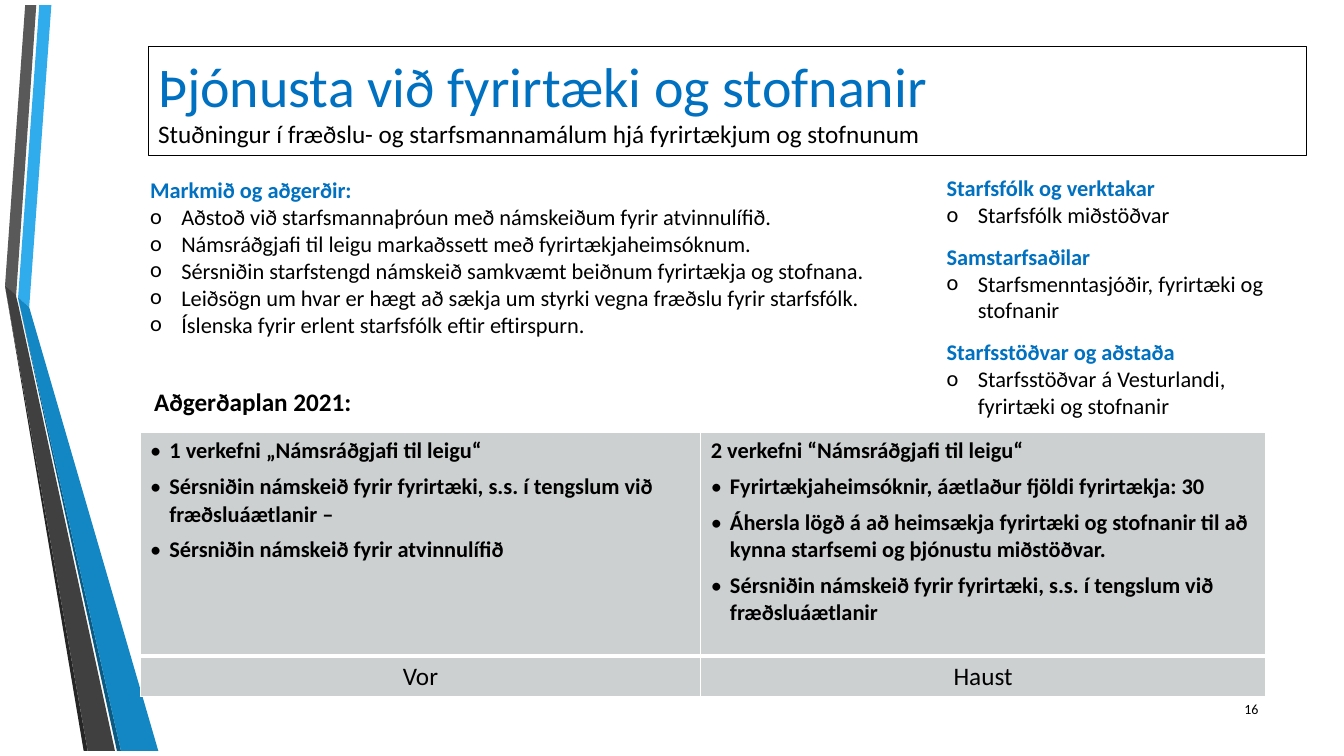
import pptx
import pptx.util
import pptx.dml.color
import pptx.enum.shapes
import pptx.enum.text
import pptx.oxml.ns
from lxml import etree

Inches, Pt = pptx.util.Inches, pptx.util.Pt
Align = pptx.enum.text.PP_ALIGN
FONT = "Calibri"
HUES = {
    "ink": "000000", "head": "0070C0", "cell": "CDD0D1", "edge": "FFFFFF",
    "sky": "30ACEC", "gray": "595959", "coal": "262626",
    "navy": "0C5A82", "blue": "1287C3", "dark": "404040",
}

# Ribbon outlines, in hundredths of an inch
RIBBONS = [
    ("sky", [(18, 295), (29, 305), (51, 5), (39, 5)]),
    ("gray", [(16, 293), (36, 5), (25, 5), (5, 283), (15, 293)]),
    ("coal", [(5, 284), (83, 745), (87, 745)]),
    ("navy", [(120, 745), (18, 296), (116, 745)]),
    ("blue", [(18, 295), (18, 296), (120, 745), (157, 745), (29, 305)]),
    ("dark", [(114, 745), (18, 302), (16, 294), (16, 293), (5, 283),
              (5, 284), (87, 745)]),
]

TITLE = "Þjónusta við fyrirtæki og stofnanir"
MOTTO = "Stuðningur í fræðslu- og starfsmannamálum hjá fyrirtækjum og stofnunum"
PLAN = "Aðgerðaplan 2021:"
PAGE = "16"

LEFT, RIGHT, SIDE = 1.39, 9.29, 3.68
# Box, item alignment, heading, items
LISTS = [
    ((LEFT, 1.7, 7.48, 1.99), Align.JUSTIFY, "Markmið og aðgerðir:", [
        "Aðstoð við starfsmannaþróun með námskeiðum fyrir atvinnulífið.",
        "Námsráðgjafi til leigu markaðssett með fyrirtækjaheimsóknum.",
        "Sérsniðin starfstengd námskeið samkvæmt beiðnum fyrirtækja og stofnana.",
        "Leiðsögn um hvar er hægt að sækja um styrki vegna fræðslu fyrir starfsfólk.",
        "Íslenska fyrir erlent starfsfólk eftir eftirspurn.",
    ]),
    ((RIGHT, 1.68, SIDE, 0.81), Align.LEFT, "Starfsfólk og verktakar",
     ["Starfsfólk miðstöðvar"]),
    ((RIGHT, 2.36, SIDE, 1.86), Align.LEFT, "Samstarfsaðilar",
     ["Starfsmenntasjóðir, fyrirtæki og stofnanir"]),
    ((RIGHT, 3.31, SIDE, 1.31), Align.LEFT, "Starfsstöðvar og aðstaða",
     ["Starfsstöðvar á Vesturlandi, fyrirtæki og stofnanir"]),
]

# Term, lead line without bullet, bulleted lines
TERMS = [
    ("Vor", None, [
        "1 verkefni „Námsráðgjafi til leigu“",
        "Sérsniðin námskeið fyrir fyrirtæki, s.s. í tengslum við fræðsluáætlanir –",
        "Sérsniðin námskeið fyrir atvinnulífið",
    ]),
    ("Haust", "2 verkefni “Námsráðgjafi til leigu“", [
        "Fyrirtækjaheimsóknir, áætlaður fjöldi fyrirtækja: 30",
        "Áhersla lögð á að heimsækja fyrirtæki og stofnanir til að kynna "
        "starfsemi og þjónustu miðstöðvar.",
        "Sérsniðin námskeið fyrir fyrirtæki, s.s. í tengslum við fræðsluáætlanir",
    ]),
]
COLS, ROWS = (5.56, 5.6), (2.22, 0.4)


def rgb(hue):
    return pptx.dml.color.RGBColor.from_string(HUES[hue])


def sub(node, tag, **attrs):
    return etree.SubElement(node, pptx.oxml.ns.qn(tag), **attrs)


def write(frame, text, size, hue="ink", bold=False, align=Align.LEFT,
          mark=None, dent=0, after=0):
    """Put text in the frame's empty first paragraph, or in a new one."""
    para = frame.paragraphs[0]
    if para.runs:
        para = frame.add_paragraph()
    if mark:
        props = para._p.get_or_add_pPr()
        props.set("marL", str(Inches(dent)))
        props.set("indent", str(-Inches(dent)))
        sub(props, "a:buFont", typeface=FONT)
        sub(props, "a:buChar", char=mark)
    para.alignment = align
    para.space_after = Pt(after)
    run = para.add_run()
    run.text = text
    font = run.font
    font.name, font.size, font.bold = FONT, Pt(size), bold
    font.color.rgb = rgb(hue)


def add_text(slide, box):
    frame = slide.shapes.add_textbox(*map(Inches, box)).text_frame
    frame.word_wrap = True
    return frame


def draw_ribbons(slide):
    for hue, (start, *rest) in RIBBONS:
        pen = slide.shapes.build_freeform(*start, scale=Inches(0.01))
        pen.add_line_segments(rest, close=True)
        shape = pen.convert_to_shape()
        shape.shadow.inherit = False
        shape.fill.solid()
        shape.fill.fore_color.rgb = rgb(hue)
        shape.line.fill.background()


def draw_title(slide):
    rect = slide.shapes.add_shape(
        pptx.enum.shapes.MSO_SHAPE.RECTANGLE,
        *map(Inches, (1.47, 0.46, 11.49, 1.08)))
    rect.shadow.inherit = False
    rect.fill.background()
    rect.line.color.rgb = rgb("ink")
    rect.line.width = Pt(0.75)
    frame = rect.text_frame
    frame.word_wrap = True
    frame.vertical_anchor = pptx.enum.text.MSO_ANCHOR.TOP
    write(frame, TITLE, 40, "head")
    write(frame, MOTTO, 18)


def style_cell(cell, row):
    props = cell._tc.get_or_add_tcPr()
    thick = "a:lnT" if row else "a:lnB"
    for side in ("a:lnL", "a:lnR", "a:lnT", "a:lnB"):
        line = sub(props, side, w=str(Pt(3 if side == thick else 1)))
        sub(sub(line, "a:solidFill"), "a:srgbClr", val=HUES["edge"])
    cell.fill.solid()
    cell.fill.fore_color.rgb = rgb("cell")


def draw_table(slide):
    box = (LEFT, 4.29, sum(COLS), sum(ROWS))
    table = slide.shapes.add_table(
        len(ROWS), len(COLS), *map(Inches, box)).table
    for row, tall in zip(table.rows, ROWS):
        row.height = Inches(tall)
    for col, (term, lead, items) in enumerate(TERMS):
        table.columns[col].width = Inches(COLS[col])
        top, foot = (table.cell(row, col) for row in range(len(ROWS)))
        for row, cell in enumerate((top, foot)):
            style_cell(cell, row)
        if lead:
            write(top.text_frame, lead, 16, bold=True, after=6)
        for item in items:
            write(top.text_frame, item, 16, bold=True, mark="•",
                  dent=0.19, after=6)
        write(foot.text_frame, term, 18, align=Align.CENTER)


def main():
    deck = pptx.Presentation()
    deck.slide_width, deck.slide_height = Inches(13.33), Inches(7.5)
    slide = deck.slides.add_slide(deck.slide_layouts[6])
    draw_ribbons(slide)
    draw_title(slide)
    page = add_text(slide, (11.98, 6.83, 0.6, 0.4))
    page.vertical_anchor = pptx.enum.text.MSO_ANCHOR.MIDDLE
    write(page, PAGE, 10, align=Align.RIGHT)
    for box, align, head, items in LISTS:
        frame = add_text(slide, box)
        write(frame, head, 16, "head", bold=True)
        for item in items:
            write(frame, item, 16, align=align, mark="o", dent=0.31)
    write(add_text(slide, (1.43, 3.78, 11.28, 0.4)), PLAN, 18, bold=True)
    draw_table(slide)
    deck.save("out.pptx")


if __name__ == "__main__":
    main()
